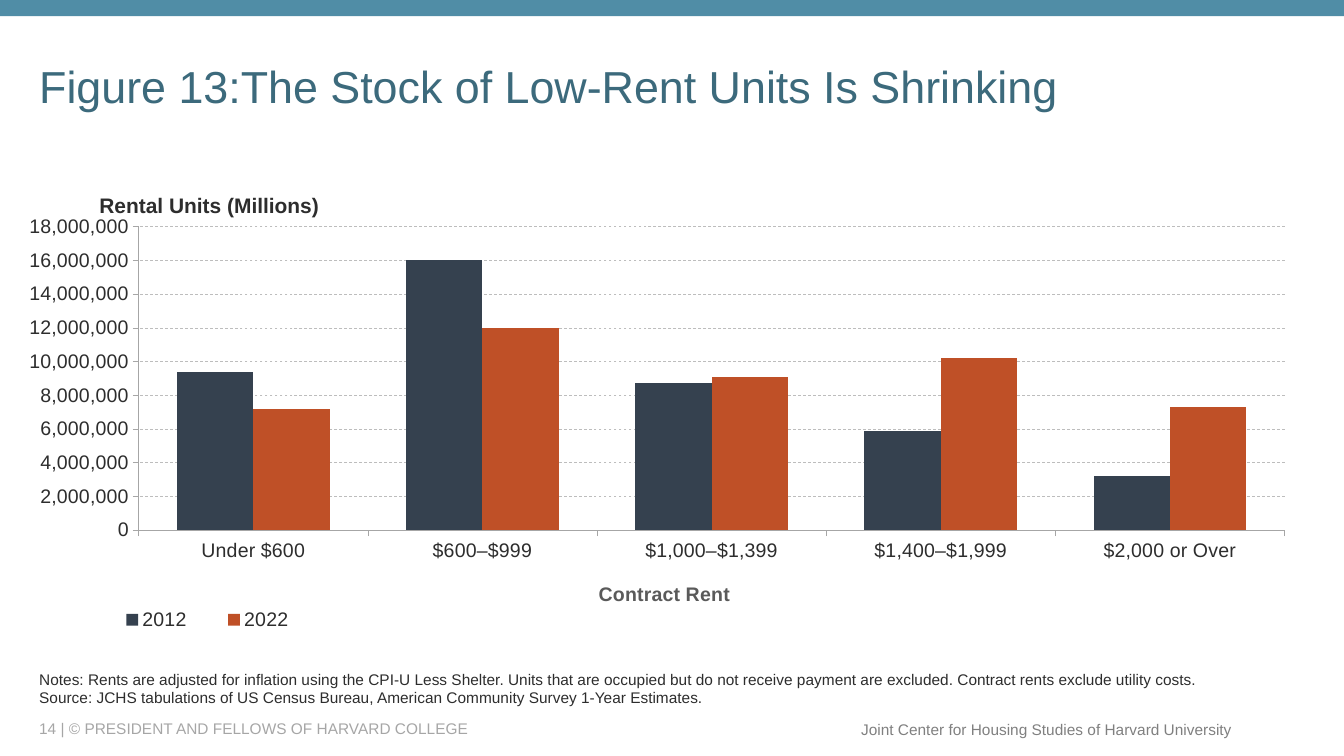
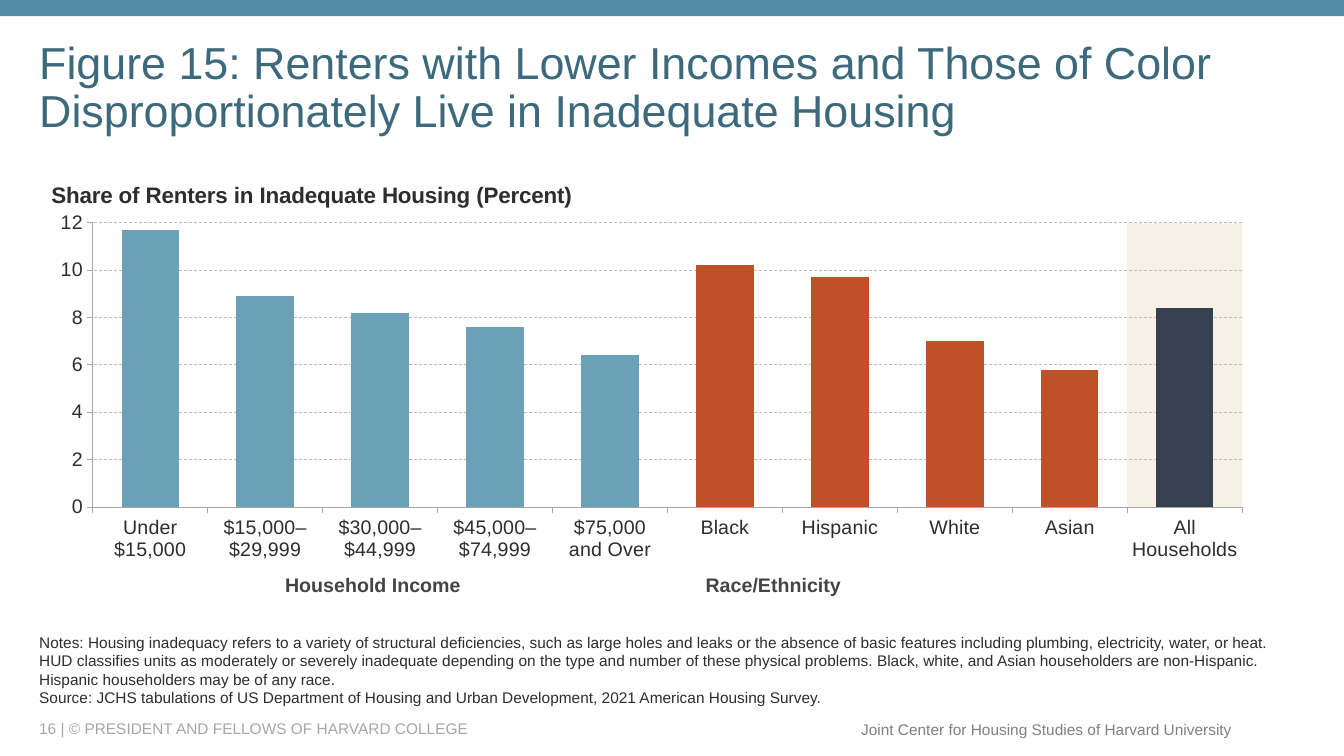
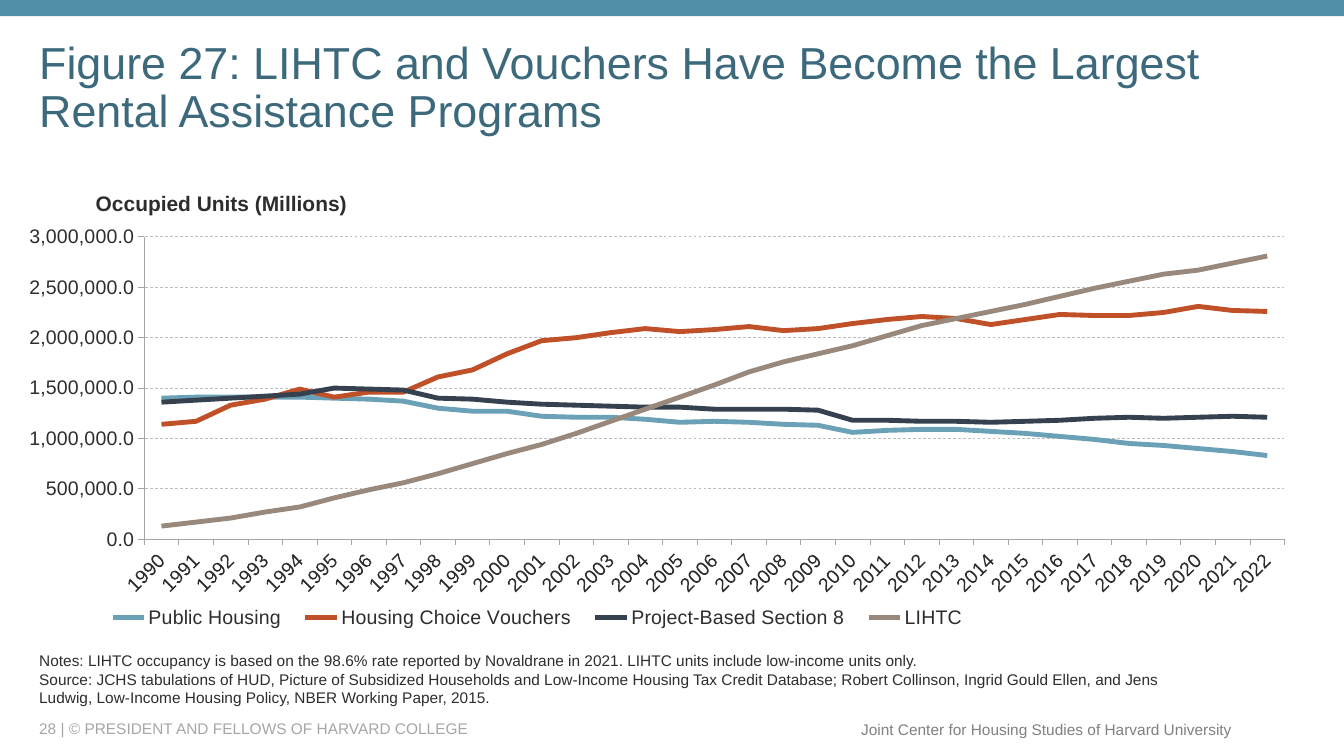
from collections import namedtuple
from dataclasses import dataclass

from pptx import Presentation
from pptx.chart.data import CategoryChartData
from pptx.dml.color import RGBColor
from pptx.enum.chart import XL_CHART_TYPE, XL_LEGEND_POSITION, XL_TICK_MARK
from pptx.enum.dml import MSO_LINE
from pptx.enum.shapes import MSO_SHAPE
from pptx.enum.text import MSO_ANCHOR, PP_ALIGN
from pptx.oxml import parse_xml
from pptx.oxml.ns import nsdecls, qn
from pptx.util import Emu, Pt

COLUMN, LINE = XL_CHART_TYPE.COLUMN_CLUSTERED, XL_CHART_TYPE.LINE
LEGEND_BOTTOM = XL_LEGEND_POSITION.BOTTOM
TICK_OUT, TICK_NONE = XL_TICK_MARK.OUTSIDE, XL_TICK_MARK.NONE
DASH = MSO_LINE.DASH
RECTANGLE = MSO_SHAPE.RECTANGLE
MIDDLE, BOTTOM = MSO_ANCHOR.MIDDLE, MSO_ANCHOR.BOTTOM
LEFT, CENTER, RIGHT = PP_ALIGN.LEFT, PP_ALIGN.CENTER, PP_ALIGN.RIGHT

EMU_PER_PX = 9144
Box = namedtuple("Box", "left top width height")
SLIDE = Box(0, 0, 1333, 750)
BAND = Box(0, 0, 1333, 16)
TITLE = Box(29, 40, 1265, 97)
NOTES = Box(29, 648, 1175, 58)
WIDE_NOTES = NOTES._replace(width=1265)
COPYRIGHT = Box(29, 713, 792, 20)
CENTER_NAME = Box(802, 709, 430, 29)
CHART = Box(29, 172, 1265, 460)
HOUSING_CHART = Box(31, 163, 1221, 453)


@dataclass(frozen=True)
class Theme:
    """Colours, font and type sizes of the deck."""

    font: str = "Arial"
    band: str = "508DA6"
    title: str = "3C6A7C"
    text: str = "2D2D2D"
    axis_title: str = "5A5A5A"
    group_label: str = "444444"
    copyright: str = "A6A6A6"
    center_name: str = "808080"
    axis: str = "A6A6A6"
    grid: str = "BDBDBD"
    highlight: str = "F6F1E4"
    blue: str = "6AA1B7"
    orange: str = "BF5027"
    navy: str = "35414F"
    taupe: str = "98897C"
    title_size: int = 32
    note_size: int = 11
    chart_size: int = 14
    chart_title_size: int = 15
    hairline: float = 0.5
    series_line: float = 3.5


THEME = Theme()


def px(length):
    """Turn px into EMU."""
    return Emu(round(length * EMU_PER_PX))


def place(box):
    """Return a box as four EMU lengths."""
    return [px(length) for length in box]


def inside(outer, box):
    """Move a box from the frame of another one to the slide."""
    return box._replace(left=outer.left + box.left, top=outer.top + box.top)


def style_font(font, size, color, bold=False):
    """Set face, size, colour and weight of a font."""
    font.name = THEME.font
    font.size = Pt(size)
    font.bold = bold
    font.color.rgb = RGBColor.from_string(color)


def add_run(paragraph, text, size, color, bold=False):
    """Add one styled run."""
    run = paragraph.add_run()
    run.text = text
    style_font(run.font, size, color, bold)


def add_text(slide, box, lines, size, color, bold=False, anchor=MIDDLE, align=LEFT, spacing=1.0):
    """Add a wrapped text box with one paragraph for each line."""
    frame = slide.shapes.add_textbox(*place(box)).text_frame
    frame.word_wrap = True
    frame.vertical_anchor = anchor
    for index, line in enumerate(lines):
        paragraph = frame.add_paragraph() if index else frame.paragraphs[0]
        paragraph.alignment = align
        paragraph.line_spacing = spacing
        add_run(paragraph, line, size, color, bold)


def add_rectangle(slide, box, color):
    """Add a plain filled rectangle."""
    shape = slide.shapes.add_shape(RECTANGLE, *place(box))
    shape.shadow.inherit = False
    shape.fill.solid()
    shape.fill.fore_color.rgb = RGBColor.from_string(color)
    shape.line.fill.background()


def add_slide(presentation, number, title):
    """Add a slide with the shared footer, band and title."""
    slide = presentation.slides.add_slide(presentation.slide_layouts[6])
    add_text(slide, COPYRIGHT, [f"{number} | © PRESIDENT AND FELLOWS OF HARVARD COLLEGE"],
             THEME.note_size, THEME.copyright)
    add_text(slide, CENTER_NAME, ["Joint Center for Housing Studies of Harvard University"],
             THEME.note_size, THEME.center_name, align=RIGHT)
    add_rectangle(slide, BAND, THEME.band)
    add_text(slide, TITLE, [title], THEME.title_size, THEME.title, spacing=0.9)
    return slide


def add_notes(slide, box, lines):
    """Add the notes and source above the footer."""
    add_text(slide, box, lines, THEME.note_size, THEME.text, anchor=BOTTOM)


def set_layout(element, frame, box, inner=False):
    """Fix a chart part at a box within the chart frame."""
    for layout in element.findall(qn("c:layout")):
        element.remove(layout)
    fractions = {"x": box.left / frame.width, "y": box.top / frame.height}
    if box.width:
        fractions.update(w=box.width / frame.width, h=box.height / frame.height)
    target = '<c:layoutTarget val="inner"/>' if inner else ""
    modes = "".join(f'<c:{key}Mode val="edge"/>' for key in "xy")
    values = "".join(f'<c:{key} val="{value:.4f}"/>' for key, value in fractions.items())
    layout = parse_xml(f'<c:layout {nsdecls("c")}><c:manualLayout>{target}{modes}{values}'
                       '</c:manualLayout></c:layout>')
    leading = element.xpath("c:tx | c:legendPos")
    if leading:
        leading[0].addnext(layout)
    else:
        element.insert(0, layout)


def clear_background(chart):
    """Make the chart and its plot area transparent."""
    empty = f'<c:spPr {nsdecls("c", "a")}><a:noFill/><a:ln><a:noFill/></a:ln></c:spPr>'
    chart.element.xpath("c:chart")[0].addnext(parse_xml(empty))
    plot_area = chart.element.xpath("c:chart/c:plotArea")[0]
    for properties in plot_area.findall(qn("c:spPr")):
        plot_area.remove(properties)
    plot_area.append(parse_xml(empty))


def style_line(line, color, width):
    """Set colour and width of a line."""
    line.color.rgb = RGBColor.from_string(color)
    line.width = Pt(width)


def style_axes(chart, maximum, step, number_format):
    """Style both axes and the dashed gridlines."""
    for axis in (chart.category_axis, chart.value_axis):
        axis.major_tick_mark, axis.minor_tick_mark = TICK_OUT, TICK_NONE
        style_font(axis.tick_labels.font, THEME.chart_size, THEME.text)
        style_line(axis.format.line, THEME.axis, THEME.hairline)
    axis = chart.value_axis
    axis.minimum_scale, axis.maximum_scale, axis.major_unit = 0, maximum, step
    axis.tick_labels.number_format = number_format
    axis.tick_labels.number_format_is_linked = False
    axis.has_major_gridlines = True
    grid = axis.major_gridlines.format.line
    style_line(grid, THEME.grid, THEME.hairline)
    grid.dash_style = DASH


def set_title(owner, title, text, size, color):
    """Write a bold chart or axis title."""
    owner.has_title = True
    paragraph = title().text_frame.paragraphs[0]
    add_run(paragraph, text, size, color, bold=True)


def add_chart(slide, box, kind, categories, series, title, title_box, plot_box, scale,
              title_size=THEME.chart_title_size):
    """Add a chart with title, axes and coloured series."""
    data = CategoryChartData()
    data.categories = categories
    for name, values, _ in series:
        data.add_series(name, values)
    chart = slide.shapes.add_chart(kind, *place(box), data).chart
    chart.has_legend = False
    style_font(chart.font, THEME.chart_size, THEME.text)
    set_title(chart, lambda: chart.chart_title, title, title_size, THEME.text)
    set_layout(chart.element.xpath("c:chart/c:title")[0], box, title_box)
    set_layout(chart.element.xpath("c:chart/c:plotArea")[0], box, plot_box, inner=True)
    style_axes(chart, *scale)
    clear_background(chart)
    plot = chart.plots[0]
    plot.vary_by_categories = False
    if kind == COLUMN:
        plot.gap_width, plot.overlap = 100, 0
    for item, (_, _, color) in zip(plot.series, series):
        if kind == LINE:
            item.smooth = False
            style_line(item.format.line, color, THEME.series_line)
        else:
            item.format.fill.solid()
            item.format.fill.fore_color.rgb = RGBColor.from_string(color)
    return chart


def add_legend(chart, frame, box):
    """Add a legend at a box below the plot."""
    chart.has_legend = True
    chart.legend.position = LEGEND_BOTTOM
    chart.legend.include_in_layout = False
    style_font(chart.legend.font, THEME.chart_size, THEME.text)
    set_layout(chart.element.xpath("c:chart/c:legend")[0], frame, box)


def build_rent_slide(presentation):
    """Build the slide on rental units by contract rent."""
    slide = add_slide(presentation, 14, "Figure 13:The Stock of Low-Rent Units Is Shrinking")
    series = [
        ("2012", [9400000, 16000000, 8700000, 5900000, 3200000], THEME.navy),
        ("2022", [7200000, 12000000, 9100000, 10200000, 7300000], THEME.orange),
    ]
    categories = ["Under $600", "$600–$999", "$1,000–$1,399", "$1,400–$1,999", "$2,000 or Over"]
    chart = add_chart(slide, CHART, COLUMN, categories, series, "Rental Units (Millions)",
                      Box(62, 15, 0, 0), Box(105, 53, 1140, 301), (18000000, 2000000, "#,##0"))
    axis = chart.category_axis
    set_title(axis, lambda: axis.axis_title, "Contract Rent", THEME.chart_size, THEME.axis_title)
    set_layout(chart.element.xpath("c:chart/c:plotArea/c:catAx/c:title")[0], CHART,
               Box(559, 401, 0, 0))
    add_legend(chart, CHART, Box(58, 428, 231, 30))
    add_notes(slide, NOTES, [
        "Notes: Rents are adjusted for inflation using the CPI-U Less Shelter. Units that are "
        "occupied but do not receive payment are excluded. Contract rents exclude utility costs.",
        "Source: JCHS tabulations of US Census Bureau, American Community Survey 1-Year Estimates.",
    ])


def build_housing_slide(presentation):
    """Build the slide on inadequate housing by income and race."""
    slide = add_slide(presentation, 16, "Figure 15: Renters with Lower Incomes and Those of "
                      "Color Disproportionately Live in Inadequate Housing")
    shares = [
        ("Under\n$15,000", 11.7, THEME.blue),
        ("$15,000–\n$29,999", 8.9, THEME.blue),
        ("$30,000–\n$44,999", 8.2, THEME.blue),
        ("$45,000–\n$74,999", 7.6, THEME.blue),
        ("$75,000\nand Over", 6.4, THEME.blue),
        ("Black", 10.2, THEME.orange),
        ("Hispanic", 9.7, THEME.orange),
        ("White", 7, THEME.orange),
        ("Asian", 5.8, THEME.orange),
        ("All\nHouseholds", 8.4, THEME.navy),
    ]
    categories, values, colors = zip(*shares)
    plot_box = Box(61, 58, 1140, 282)
    column = plot_box.width / len(shares)
    last_column = plot_box._replace(left=plot_box.left + plot_box.width - column, width=column)
    add_rectangle(slide, inside(HOUSING_CHART, last_column), THEME.highlight)
    chart = add_chart(slide, HOUSING_CHART, COLUMN, categories,
                      [("Series 1", values, THEME.blue)],
                      "Share of Renters in Inadequate Housing (Percent)",
                      Box(16, 12, 0, 0), plot_box, (12, 2, "#,##0"), title_size=16)
    for index, color in enumerate(colors):
        fill = chart.plots[0].series[0].points[index].format.fill
        fill.solid()
        fill.fore_color.rgb = RGBColor.from_string(color)
    for label, left in (("Household Income", 229), ("Race/Ethnicity", 626)):
        add_text(slide, inside(HOUSING_CHART, Box(left, 402, 220, 30)), [label],
                 THEME.chart_size, THEME.group_label, bold=True, align=CENTER)
    add_notes(slide, WIDE_NOTES, [
        "Notes: Housing inadequacy refers to a variety of structural deficiencies, such as large "
        "holes and leaks or the absence of basic features including plumbing, electricity, water, "
        "or heat. HUD classifies units as moderately or severely inadequate depending on the type "
        "and number of these physical problems. Black, white, and Asian householders are "
        "non-Hispanic. Hispanic householders may be of any race.",
        "Source: JCHS tabulations of US Department of Housing and Urban Development, "
        "2021 American Housing Survey.",
    ])


def build_assistance_slide(presentation):
    """Build the slide on rental assistance programs over time."""
    slide = add_slide(presentation, 28, "Figure 27: LIHTC and Vouchers Have Become the Largest "
                      "Rental Assistance Programs")
    ten_thousands = [
        ("Public Housing", THEME.blue,
         [140, 141, 141, 141, 141, 140, 139, 137, 130, 127, 127, 122, 121, 121, 119, 116, 117,
          116, 114, 113, 106, 108, 109, 109, 107, 105, 102, 99, 95, 93, 90, 87, 83]),
        ("Housing Choice Vouchers", THEME.orange,
         [114, 117, 133, 139, 149, 141, 146, 146, 161, 168, 184, 197, 200, 205, 209, 206, 208,
          211, 207, 209, 214, 218, 221, 219, 213, 218, 223, 222, 222, 225, 231, 227, 226]),
        ("Project-Based Section 8", THEME.navy,
         [136, 138, 140, 142, 144, 150, 149, 148, 140, 139, 136, 134, 133, 132, 131, 131, 129,
          129, 129, 128, 118, 118, 117, 117, 116, 117, 118, 120, 121, 120, 121, 122, 121]),
        ("LIHTC", THEME.taupe,
         [13, 17, 21, 27, 32, 41, 49, 56, 65, 75, 85, 94, 105, 117, 129, 141, 153,
          166, 176, 184, 192, 202, 212, 219, 226, 233, 241, 249, 256, 263, 267, 274, 281]),
    ]
    series = [(name, [value * 10000 for value in values], color)
              for name, color, values in ten_thousands]
    years = [str(year) for year in range(1990, 2023)]
    chart = add_chart(slide, CHART, LINE, years, series, "Occupied Units (Millions)",
                      Box(58, 13, 0, 0), Box(110, 63, 1135, 300), (3000000, 500000, "#,##0.0"))
    label_body = chart.element.xpath("c:chart/c:plotArea/c:catAx/c:txPr/a:bodyPr")[0]
    label_body.set("rot", "-2700000")
    label_body.set("vert", "horz")
    add_legend(chart, CHART, Box(61, 426, 881, 30))
    add_notes(slide, NOTES, [
        "Notes: LIHTC occupancy is based on the 98.6% rate reported by Novaldrane in 2021. "
        "LIHTC units include low-income units only.",
        "Source: JCHS tabulations of HUD, Picture of Subsidized Households and Low-Income Housing "
        "Tax Credit Database; Robert Collinson, Ingrid Gould Ellen, and Jens Ludwig, Low-Income "
        "Housing Policy, NBER Working Paper, 2015.",
    ])


def main():
    """Build and save the deck."""
    presentation = Presentation()
    presentation.slide_width, presentation.slide_height = px(SLIDE.width), px(SLIDE.height)
    build_rent_slide(presentation)
    build_housing_slide(presentation)
    build_assistance_slide(presentation)
    presentation.save("out.pptx")


if __name__ == "__main__":
    main()
